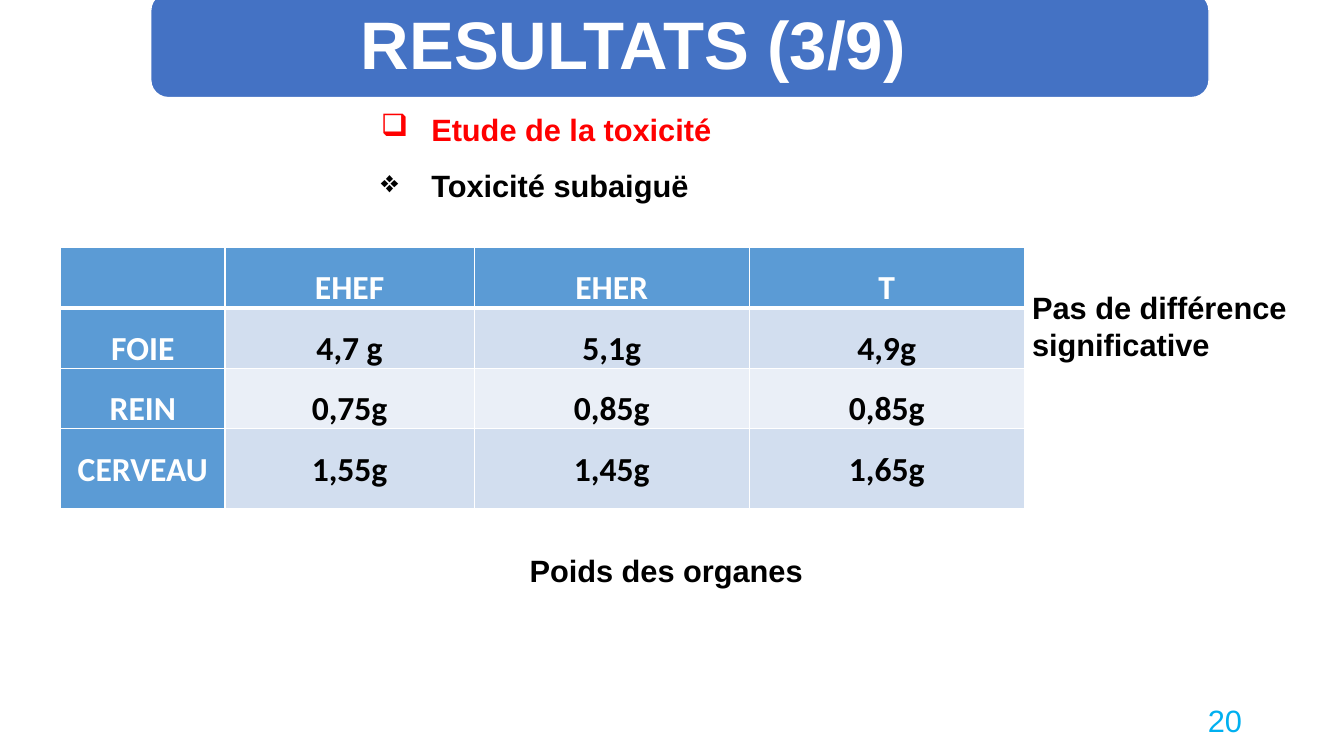
from lxml import etree
from pptx import Presentation
from pptx.dml.color import RGBColor
from pptx.enum.shapes import MSO_SHAPE
from pptx.enum.text import MSO_ANCHOR, PP_ALIGN
from pptx.oxml.ns import qn
from pptx.util import Cm, Pt

WHITE = RGBColor(0xFF, 0xFF, 0xFF)
BLACK = RGBColor(0x00, 0x00, 0x00)
RED = RGBColor(0xFF, 0x00, 0x00)
CYAN = RGBColor(0x00, 0xB0, 0xF0)
BANNER_BLUE = RGBColor(0x44, 0x72, 0xC4)
HEADER_BLUE = RGBColor(0x5B, 0x9B, 0xD5)
BAND_DARK = RGBColor(0xD2, 0xDE, 0xEF)
BAND_LIGHT = RGBColor(0xEA, 0xEF, 0xF7)


def write(paragraph, text, color, align=PP_ALIGN.LEFT, spacing=1.0, **font_format):
    paragraph.alignment = align
    paragraph.line_spacing = spacing
    run = paragraph.add_run()
    run.text = text
    run.font.color.rgb = color
    values = {"name": "Arial", "size": Pt(22), "bold": True} | font_format
    for name, value in values.items():
        setattr(run.font, name, value)


def add_frame(left, top, width, height, **frame_format):
    box = slide.shapes.add_textbox(Cm(left), Cm(top), Cm(width), Cm(height))
    for name, value in ({"word_wrap": True} | frame_format).items():
        setattr(box.text_frame, name, value)
    return box.text_frame


presentation = Presentation()
presentation.slide_width = Cm(33.87)
presentation.slide_height = Cm(19.05)
slide = presentation.slides.add_slide(presentation.slide_layouts[6])

# Title banner
banner = slide.shapes.add_shape(
    MSO_SHAPE.ROUNDED_RECTANGLE, Cm(3.8), Cm(-0.18), Cm(26.67), Cm(2.64))
banner.shadow.inherit = False
banner.fill.solid()
banner.fill.fore_color.rgb = BANNER_BLUE
banner.line.color.rgb = WHITE
banner.line.width = Pt(1)
title = add_frame(2.82, 0, 26.29, 2.39, vertical_anchor=MSO_ANCHOR.MIDDLE,
                  margin_left=Cm(0.66), margin_right=Cm(0.66),
                  margin_top=Cm(0.66), margin_bottom=Cm(0.66))
write(title.paragraphs[0], "RESULTATS (3/9)", WHITE, PP_ALIGN.CENTER, 0.9, size=Pt(48))

# Bulleted headings
headings = add_frame(9.35, 2.21, 10.46, 4.01)
for index, (bullet, text, color) in enumerate([
        ("❑", "Etude de la toxicité", RED),
        ("❖", "Toxicité subaiguë", BLACK)]):
    paragraph = headings.add_paragraph() if index else headings.paragraphs[0]
    write(paragraph, text, color, spacing=1.5)
    properties = paragraph._p.get_or_add_pPr()
    properties.set("marL", str(Cm(1.27)))
    properties.set("indent", str(Cm(-1.27)))
    etree.SubElement(properties, qn("a:buChar")).set("char", bullet)

# Organ weight table
rows = [
    ["", "EHEF", "EHER", "T"],
    ["FOIE", "4,7 g", "5,1g", "4,9g"],
    ["REIN", "0,75g", "0,85g", "0,85g"],
    ["CERVEAU", "1,55g", "1,45g", "1,65g"],
]
column_widths = [4.14, 6.28, 6.93, 6.93]
row_heights = [1.52, 1.52, 1.52, 2.01]
table = slide.shapes.add_table(
    len(rows), len(column_widths), Cm(1.53), Cm(6.23),
    Cm(sum(column_widths)), Cm(sum(row_heights))).table
for column, width in zip(table.columns, column_widths):
    column.width = Cm(width)
for row, height in zip(table.rows, row_heights):
    row.height = Cm(height)

cell_margins = {"margin_left": Cm(0.18), "margin_right": Cm(0.18),
                "margin_top": 0, "margin_bottom": 0}
for row_index, texts in enumerate(rows):
    for column_index, text in enumerate(texts):
        cell = table.cell(row_index, column_index)
        for name, value in cell_margins.items():
            setattr(cell, name, value)

        # White borders, thicker under the header row
        for side in ("L", "R", "T", "B"):
            under_header = (row_index, side) in ((0, "B"), (1, "T"))
            border = etree.SubElement(cell._tc.get_or_add_tcPr(), qn(f"a:ln{side}"))
            border.set("w", str(Pt(3 if under_header else 1)))
            border_fill = etree.SubElement(border, qn("a:solidFill"))
            etree.SubElement(border_fill, qn("a:srgbClr")).set("val", str(WHITE))

        is_header = row_index == 0 or column_index == 0
        band = BAND_DARK if row_index % 2 else BAND_LIGHT
        cell.fill.solid()
        cell.fill.fore_color.rgb = HEADER_BLUE if is_header else band
        if text:
            write(cell.text_frame.paragraphs[0], text, WHITE if is_header else BLACK,
                  PP_ALIGN.CENTER, 1.5, name="Calibri", size=Pt(24))

# Conclusion, caption and page number
conclusion = add_frame(25.76, 7.14, 7.7, 2.13)
write(conclusion.paragraphs[0], "Pas de différence significative", BLACK)
caption = add_frame(8.46, 13.79, 16.66, 1.19)
write(caption.paragraphs[0], "Poids des organes", BLACK, PP_ALIGN.CENTER)
page_number = add_frame(23.93, 17.65, 7.62, 1.02, vertical_anchor=MSO_ANCHOR.MIDDLE)
write(page_number.paragraphs[0], "20", CYAN, PP_ALIGN.RIGHT, bold=False)

presentation.save("out.pptx")
